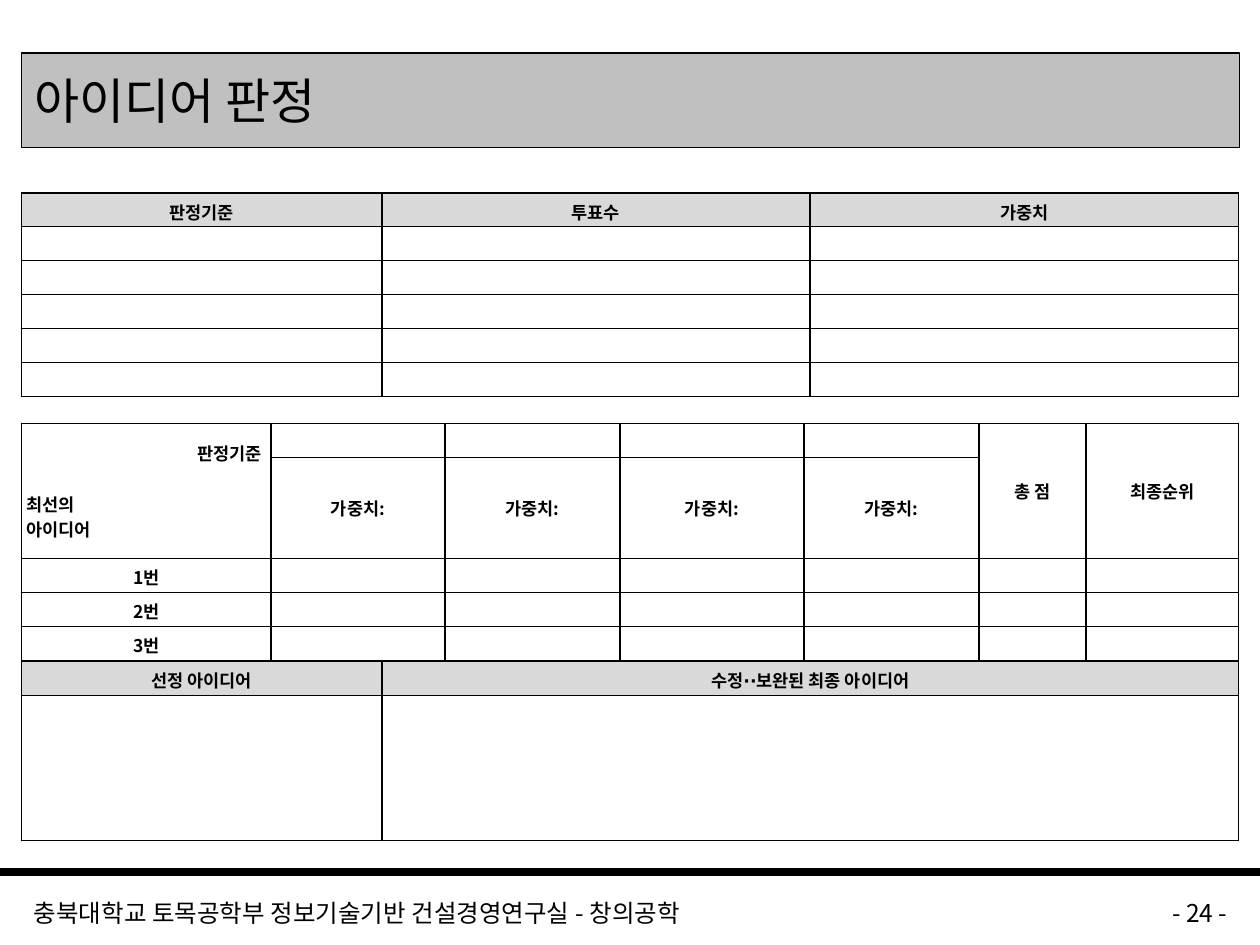
from dataclasses import dataclass, field

from lxml import etree
from pptx import Presentation
from pptx.dml.color import RGBColor
from pptx.enum.shapes import MSO_CONNECTOR
from pptx.enum.text import MSO_ANCHOR, PP_ALIGN
from pptx.oxml.ns import qn
from pptx.util import Inches, Pt

BLACK = RGBColor(0x00, 0x00, 0x00)
TITLE_GRAY = RGBColor(0xC0, 0xC0, 0xC0)
HEADER_GRAY = RGBColor(0xD9, 0xD9, 0xD9)
FONT = "Noto Sans CJK KR"
LEFT, CENTER, RIGHT = PP_ALIGN.LEFT, PP_ALIGN.CENTER, PP_ALIGN.RIGHT
TOP, MIDDLE = MSO_ANCHOR.TOP, MSO_ANCHOR.MIDDLE
STRAIGHT = MSO_CONNECTOR.STRAIGHT
MARGIN = 0.17
CONTENT_WIDTH = 9.67
CELL_SIZE = 10
ROW_HEIGHT = 0.27
SIDE_COLUMN = 2.86


@dataclass
class Grid:
    top: float
    cols: list[float]
    rows: list[float]
    texts: dict[tuple[int, int], str]
    shaded_header: bool = True
    anchor: MSO_ANCHOR = TOP
    side_inset: float = 0.1
    merged_cols: list[int] = field(default_factory=list)


GRIDS = [
    Grid(1.53, [SIDE_COLUMN, 3.4, 3.4], [ROW_HEIGHT] * 6,
         {(0, 0): "판정기준", (0, 1): "투표수", (0, 2): "가중치"}),
    Grid(3.36, [1.98, 1.38, 1.39, 1.46, 1.39, 0.85, 1.21],
         [ROW_HEIGHT, 0.5] + [ROW_HEIGHT] * 3,
         {(0, 5): "총 점", (0, 6): "최종순위"}
         | {(1, col): "가중치:" for col in range(1, 5)}
         | {(row, 0): f"{row - 1}번" for row in range(2, 5)},
         shaded_header=False, anchor=MIDDLE, side_inset=0.04,
         merged_cols=[0, 5, 6]),
    Grid(5.25, [SIDE_COLUMN, 6.8], [ROW_HEIGHT, 1.15],
         {(0, 0): "선정 아이디어", (0, 1): "수정⋅⋅보완된 최종 아이디어"}),
]


def write(p, text: str, size: float, align: PP_ALIGN, bold: bool = False) -> None:
    p.alignment = align
    r = p.add_run()
    r.text = text
    for name, value in {"name": FONT, "size": Pt(size), "bold": bold}.items():
        setattr(r.font, name, value)
    r.font.color.rgb = BLACK
    etree.SubElement(r.font._element, qn("a:ea"), typeface=FONT)


def add_borders(cell) -> None:
    tc_pr = cell._tc.get_or_add_tcPr()
    for side in ("lnL", "lnR", "lnT", "lnB"):
        ln = etree.SubElement(tc_pr, qn(f"a:{side}"), w=str(Pt(1)))
        fill = etree.SubElement(ln, qn("a:solidFill"))
        etree.SubElement(fill, qn("a:srgbClr"), val=str(BLACK))


def add_grid(s, grid: Grid):
    frame = s.shapes.add_table(
        len(grid.rows), len(grid.cols), Inches(MARGIN), Inches(grid.top),
        Inches(CONTENT_WIDTH), Inches(sum(grid.rows)))
    table = frame.table
    table.first_row = table.horz_banding = False
    for column, width in zip(table.columns, grid.cols):
        column.width = Inches(width)
    for row, height in zip(table.rows, grid.rows):
        row.height = Inches(height)
    for row in range(len(grid.rows)):
        for col in range(len(grid.cols)):
            cell = table.cell(row, col)
            cell.vertical_anchor = grid.anchor
            cell.margin_left = cell.margin_right = Inches(grid.side_inset)
            add_borders(cell)
            if grid.shaded_header and row == 0:
                cell.fill.solid()
                cell.fill.fore_color.rgb = HEADER_GRAY
            else:
                cell.fill.background()
            p = cell.text_frame.paragraphs[0]
            if (row, col) in grid.texts:
                write(p, grid.texts[row, col], CELL_SIZE, CENTER, bold=True)
            else:
                # An empty cell takes its line height from the end mark
                p._p.get_or_add_endParaRPr().set("sz", str(CELL_SIZE * 100))
    for col in grid.merged_cols:
        table.cell(0, col).merge(table.cell(1, col))
    return table


def write_corner(cell) -> None:
    """Label the corner cell: criteria at the right, ideas at the left."""
    tf = cell.text_frame
    write(tf.paragraphs[0], "판정기준 ", CELL_SIZE, RIGHT, bold=True)
    for text, gap in (("최선의", 14.5), ("아이디어", 0)):
        p = tf.add_paragraph()
        p.space_before = Pt(gap)
        write(p, text, CELL_SIZE, LEFT, bold=True)


def add_title(s, text: str) -> None:
    title = s.shapes.title
    box = {"left": MARGIN, "top": 0.42, "width": CONTENT_WIDTH, "height": 0.75}
    for name, value in box.items():
        setattr(title, name, Inches(value))
    title.fill.solid()
    title.fill.fore_color.rgb = TITLE_GRAY
    title.line.color.rgb = BLACK
    title.line.width = Pt(0.75)
    title.text_frame.vertical_anchor = MIDDLE
    write(title.text_frame.paragraphs[0], text, 28, LEFT)


def add_footer_text(s, left: float, width: float, text: str, align: PP_ALIGN) -> None:
    tf = s.shapes.add_textbox(
        Inches(left), Inches(7.08), Inches(width), Inches(0.25)).text_frame
    tf.word_wrap = True
    write(tf.paragraphs[0], text, 14, align)


def add_footer_rule(s) -> None:
    rule = s.shapes.add_connector(
        STRAIGHT, Inches(0), Inches(6.92), Inches(10), Inches(6.92))
    rule.line.color.rgb = BLACK
    rule.line.width = Pt(4.5)
    etree.SubElement(rule._element.spPr, qn("a:effectLst"))


def main() -> None:
    prs = Presentation()
    prs.slide_width, prs.slide_height = Inches(10), Inches(7.5)
    s = prs.slides.add_slide(prs.slide_layouts[5])
    add_footer_rule(s)
    add_title(s, "아이디어 판정")
    add_footer_text(s, MARGIN, 7.83,
                    "충북대학교 토목공학부 정보기술기반 건설경영연구실 - 창의공학", LEFT)
    add_footer_text(s, 8.17, 1.67, "- 24 -", RIGHT)
    _, scores, _ = [add_grid(s, grid) for grid in GRIDS]
    write_corner(scores.cell(0, 0))
    prs.save("out.pptx")


if __name__ == "__main__":
    main()
